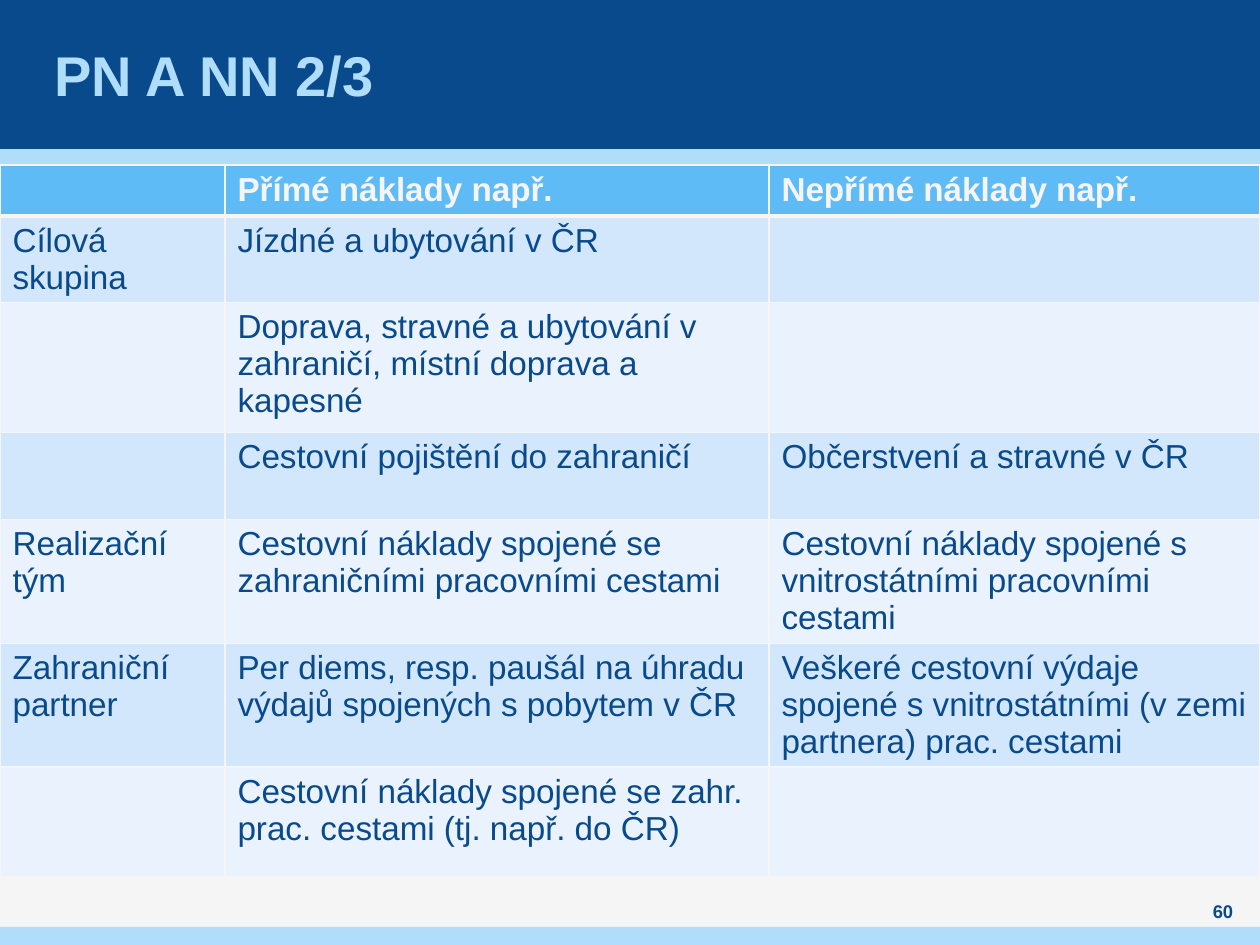
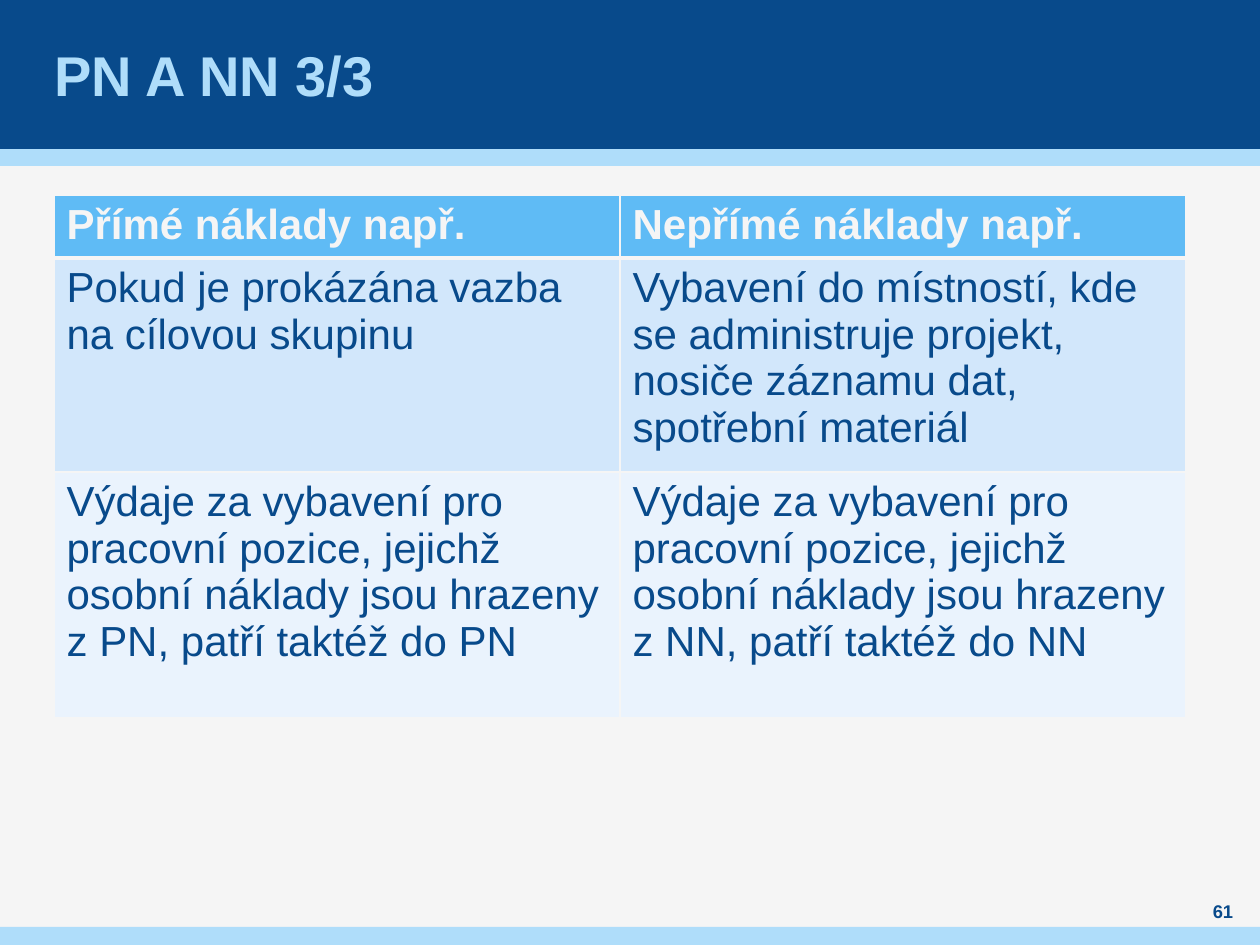
from dataclasses import dataclass

from lxml.etree import SubElement
from pptx import Presentation
from pptx.dml.color import RGBColor
from pptx.enum.shapes import MSO_SHAPE as Shape
from pptx.enum.text import MSO_ANCHOR as Anchor, MSO_AUTO_SIZE as AutoSize, PP_ALIGN as Align
from pptx.oxml.ns import qn
from pptx.slide import Slide
from pptx.table import _Cell as Cell
from pptx.util import Emu, Pt

PX = 914400 // 126
SLIDE_W, SLIDE_H = 1260, 945
FONT = "Arial"

NAVY = RGBColor(0x08, 0x4A, 0x8B)
PALE_BLUE = RGBColor(0xAF, 0xDD, 0xFA)
SKY = RGBColor(0x5F, 0xBB, 0xF5)
ROW_ODD = RGBColor(0xD2, 0xE7, 0xFB)
ROW_EVEN = RGBColor(0xEA, 0xF3, 0xFD)
PAPER = RGBColor(0xF5, 0xF5, 0xF5)

THIN, THICK = 1, 3


@dataclass(frozen=True)
class Box:
    left: int
    top: int
    width: int
    height: int

    def emu(self) -> list[Emu]:
        return [Emu(v * PX) for v in (self.left, self.top, self.width, self.height)]


@dataclass(frozen=True)
class Band:
    box: Box
    color: RGBColor


@dataclass(frozen=True)
class CostTable:
    left: int
    top: int
    cols: list[int]
    rows: list[int]
    size: int
    texts: list[list[str]]


@dataclass(frozen=True)
class Page:
    title: str
    number: int
    table: CostTable


BANDS = [
    Band(Box(0, 148, SLIDE_W, 18), PALE_BLUE),
    Band(Box(0, 0, SLIDE_W, 149), NAVY),
    Band(Box(0, 927, SLIDE_W, 18), PALE_BLUE),
]
TITLE_BOX = Box(49, 0, 1160, 149)
NUMBER_BOX = Box(1191, 898, 64, 26)

DIRECT, INDIRECT = "Přímé náklady např.", "Nepřímé náklady např."

PAGES = [
    Page("PN A NN 2/3", 60, CostTable(
        0, 165, [225, 544, 491], [49, 86, 130, 87, 124, 123, 110], 19,
        [
            ["", DIRECT, INDIRECT],
            ["Cílová skupina", "Jízdné a ubytování v ČR", ""],
            ["", "Doprava, stravné a ubytování v zahraničí, místní doprava a kapesné", ""],
            ["", "Cestovní pojištění do zahraničí", "Občerstvení a stravné v ČR"],
            ["Realizační tým",
             "Cestovní náklady spojené se zahraničními pracovními cestami",
             "Cestovní náklady spojené s vnitrostátními pracovními cestami"],
            ["Zahraniční partner",
             "Per diems, resp. paušál na úhradu výdajů spojených s pobytem v ČR",
             "Veškeré cestovní výdaje spojené s vnitrostátními (v zemi partnera) prac. cestami"],
            ["", "Cestovní náklady spojené se zahr. prac. cestami (tj. např. do ČR)", ""],
        ])),
    Page("PN A NN 3/3", 61, CostTable(
        54, 195, [566, 566], [63, 214, 246], 24,
        [
            [DIRECT, INDIRECT],
            ["Pokud je prokázána vazba na cílovou skupinu",
             "Vybavení do místností, kde se administruje projekt, "
             "nosiče záznamu dat, spotřební materiál"],
            [f"Výdaje za vybavení pro pracovní pozice, jejichž osobní náklady "
             f"jsou hrazeny z {kind}, patří taktéž do {kind}" for kind in ("PN", "NN")],
        ])),
]


def write(tf, text: str, size: float, color: RGBColor, bold: bool,
          align: Align = Align.LEFT) -> None:
    p = tf.paragraphs[0]
    p.alignment = align
    r = p.add_run()
    r.text = text
    style = {"name": FONT, "size": Pt(size), "bold": bold}
    for name, value in style.items():
        setattr(r.font, name, value)
    r.font.color.rgb = color


def format_frame(tf, side_margin: int) -> None:
    style = {
        "word_wrap": True, "auto_size": AutoSize.NONE, "vertical_anchor": Anchor.MIDDLE,
        "margin_left": Emu(side_margin * PX), "margin_right": Emu(side_margin * PX),
        "margin_top": 0, "margin_bottom": 0,
    }
    for name, value in style.items():
        setattr(tf, name, value)


def add_bands(slide: Slide) -> None:
    """Draw the bands behind the title placeholder."""
    title = slide.shapes.title
    for band in BANDS:
        sp = slide.shapes.add_shape(Shape.RECTANGLE, *band.box.emu())
        sp.shadow.inherit = False
        sp.fill.solid()
        sp.fill.fore_color.rgb = band.color
        sp.line.fill.background()
        title._element.addprevious(sp._element)


def add_title(slide: Slide, text: str) -> None:
    sp = slide.shapes.title
    sp.left, sp.top, sp.width, sp.height = TITLE_BOX.emu()
    format_frame(sp.text_frame, 5)
    write(sp.text_frame, text, 32, PALE_BLUE, True)


def add_number(slide: Slide, number: int) -> None:
    tf = slide.shapes.add_textbox(*NUMBER_BOX.emu()).text_frame
    format_frame(tf, 0)
    write(tf, str(number), 10.5, NAVY, True, Align.CENTER)


def set_borders(cell: Cell, top: int, bottom: int) -> None:
    tc_pr = cell._tc.get_or_add_tcPr()
    for side, width in {"L": THIN, "R": THIN, "T": top, "B": bottom}.items():
        ln = SubElement(tc_pr, qn(f"a:ln{side}"), w=str(Pt(width)))
        fill = SubElement(ln, qn("a:solidFill"))
        SubElement(fill, qn("a:srgbClr"), val=str(PAPER))


def add_cost_table(slide: Slide, spec: CostTable) -> None:
    box = Box(spec.left, spec.top, sum(spec.cols), sum(spec.rows))
    table = slide.shapes.add_table(len(spec.rows), len(spec.cols), *box.emu()).table
    for col, width in zip(table.columns, spec.cols):
        col.width = Emu(width * PX)
    for i, (row, height) in enumerate(zip(table.rows, spec.rows)):
        row.height = Emu(height * PX)
        header = i == 0
        fill = SKY if header else ROW_ODD if i % 2 else ROW_EVEN
        for cell, text in zip(row.cells, spec.texts[i]):
            set_borders(cell, THICK if i == 1 else THIN, THICK if header else THIN)
            cell.fill.solid()
            cell.fill.fore_color.rgb = fill
            if text:
                write(cell.text_frame, text, spec.size, PAPER if header else NAVY, header)


def main() -> None:
    prs = Presentation()
    prs.slide_width, prs.slide_height = Emu(SLIDE_W * PX), Emu(SLIDE_H * PX)
    title_only = prs.slide_layouts[5]
    for page in PAGES:
        slide = prs.slides.add_slide(title_only)
        slide.background.fill.solid()
        slide.background.fill.fore_color.rgb = PAPER
        add_bands(slide)
        add_title(slide, page.title)
        add_cost_table(slide, page.table)
        add_number(slide, page.number)
    prs.save("out.pptx")


if __name__ == "__main__":
    main()
